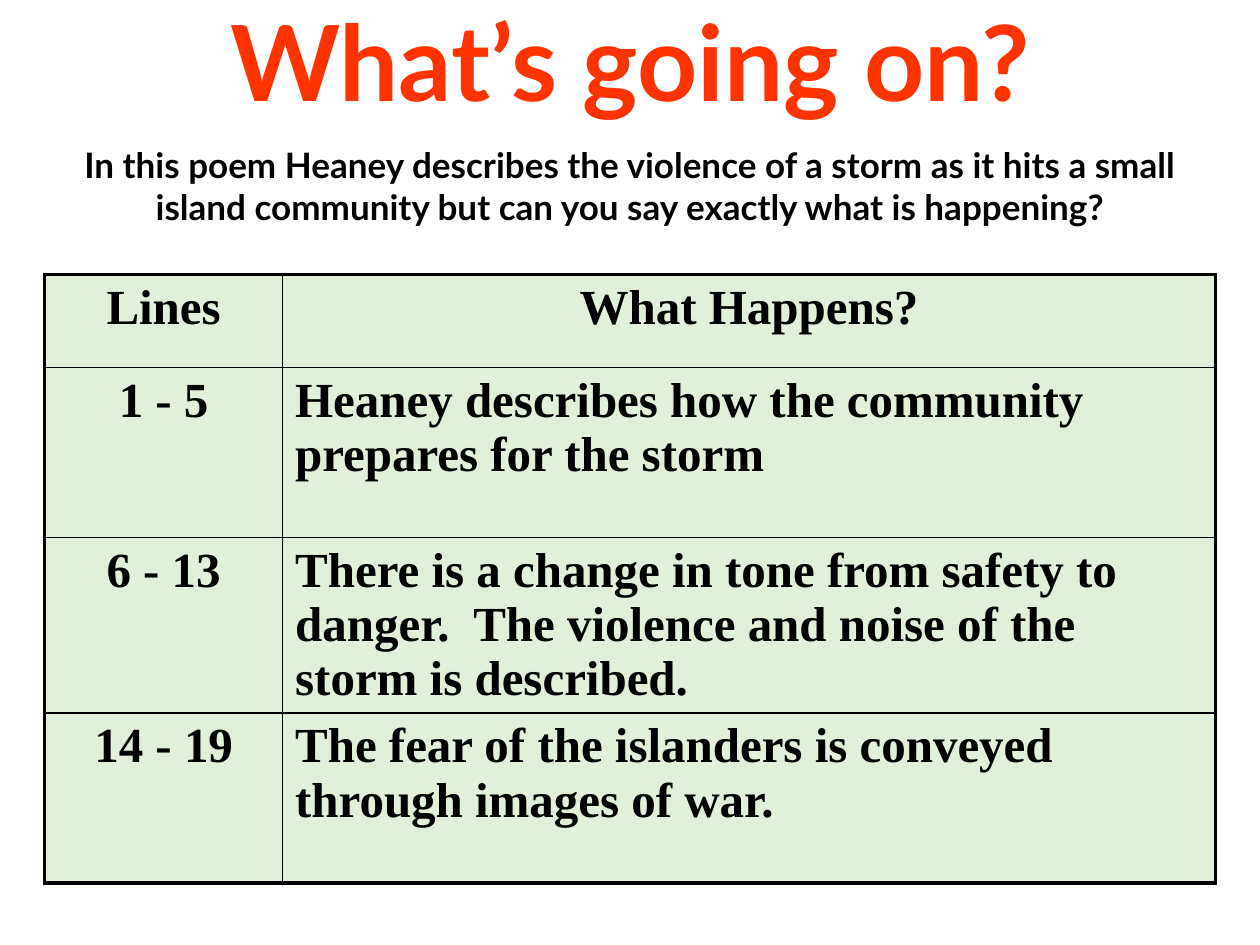
from lxml.etree import SubElement
from pptx import Presentation
from pptx.dml.color import RGBColor
from pptx.enum.text import MSO_ANCHOR as Anchor, MSO_AUTO_SIZE as AutoSize, PP_ALIGN as Align
from pptx.oxml.ns import qn
from pptx.util import Pt

BLACK = RGBColor(0x00, 0x00, 0x00)
RED = RGBColor(0xFF, 0x33, 0x00)
PALE_GREEN = RGBColor(0xE2, 0xF0, 0xD9)

HEADING_FONT = "Lato"
TABLE_FONT = "Times New Roman"
OUTER_BORDER = 2.25
INNER_BORDER = 1

COLUMN_WIDTHS = [136, 533]
ROW_HEIGHTS = [53.2, 97.2, 100.2, 97.2]
ROWS = [
    ("Lines", "What Happens?"),
    ("1 - 5", "Heaney describes how the community prepares for the storm"),
    ("6 - 13", "There is a change in tone from safety to danger.  "
               "The violence and noise of the storm is described."),
    ("14 - 19", "The fear of the islanders is conveyed through images of war."),
]


def write_text(frame, text, font, size, color=BLACK, align=Align.CENTER, line_spacing=1.0):
    frame.word_wrap = True
    paragraph = frame.paragraphs[0]
    paragraph.alignment = align
    paragraph.line_spacing = line_spacing
    run = paragraph.add_run()
    run.text = text
    run.font.name = font
    run.font.size = Pt(size)
    run.font.bold = True
    run.font.color.rgb = color


def place(shape, left, top, width, height):
    shape.left, shape.top = Pt(left), Pt(top)
    shape.width, shape.height = Pt(width), Pt(height)


def add_title(slide, text):
    title = slide.shapes.title
    place(title, 54, 0, 612, 77)
    title.text_frame.auto_size = AutoSize.NONE
    title.text_frame.vertical_anchor = Anchor.MIDDLE
    write_text(title.text_frame, text, HEADING_FONT, 60, color=RED, line_spacing=0.9)


def add_introduction(slide, text):
    box = slide.shapes.add_textbox(Pt(14), Pt(78.5), Pt(692), Pt(55.5))
    write_text(box.text_frame, text, HEADING_FONT, 20)
    box.text_frame.auto_size = AutoSize.SHAPE_TO_FIT_TEXT


def set_borders(cell, widths):
    properties = cell._tc.get_or_add_tcPr()
    for side, width in widths.items():
        line = SubElement(properties, qn(f"a:ln{side}"), w=str(Pt(width)))
        fill = SubElement(line, qn("a:solidFill"))
        SubElement(fill, qn("a:srgbClr"), val=str(BLACK))


def add_summary_table(slide, left, top):
    last_row, last_column = len(ROWS) - 1, len(COLUMN_WIDTHS) - 1
    table = slide.shapes.add_table(
        len(ROWS), len(COLUMN_WIDTHS), Pt(left), Pt(top),
        Pt(sum(COLUMN_WIDTHS)), Pt(sum(ROW_HEIGHTS))).table
    table.horz_banding = False
    for column, width in zip(table.columns, COLUMN_WIDTHS):
        column.width = Pt(width)
    for row_index, texts in enumerate(ROWS):
        table.rows[row_index].height = Pt(ROW_HEIGHTS[row_index])
        for column_index, text in enumerate(texts):
            cell = table.cell(row_index, column_index)
            outer_sides = {
                "L": column_index == 0,
                "R": column_index == last_column,
                "T": row_index == 0,
                "B": row_index == last_row,
            }
            set_borders(cell, {side: OUTER_BORDER if outer else INNER_BORDER
                               for side, outer in outer_sides.items()})
            cell.fill.solid()
            cell.fill.fore_color.rgb = PALE_GREEN
            centered = row_index == 0 or column_index == 0
            write_text(cell.text_frame, text, TABLE_FONT, 28,
                       align=Align.CENTER if centered else Align.LEFT)


def main():
    presentation = Presentation()
    presentation.slide_width, presentation.slide_height = Pt(720), Pt(540)
    slide = presentation.slides.add_slide(presentation.slide_layouts.get_by_name("Title Only"))
    add_title(slide, "What’s going on?")
    add_summary_table(slide, 25.5, 156.75)
    add_introduction(slide, "In this poem Heaney describes the violence of a storm as it hits "
                            "a small island community but can you say exactly what is happening?")
    presentation.save("out.pptx")


if __name__ == "__main__":
    main()
